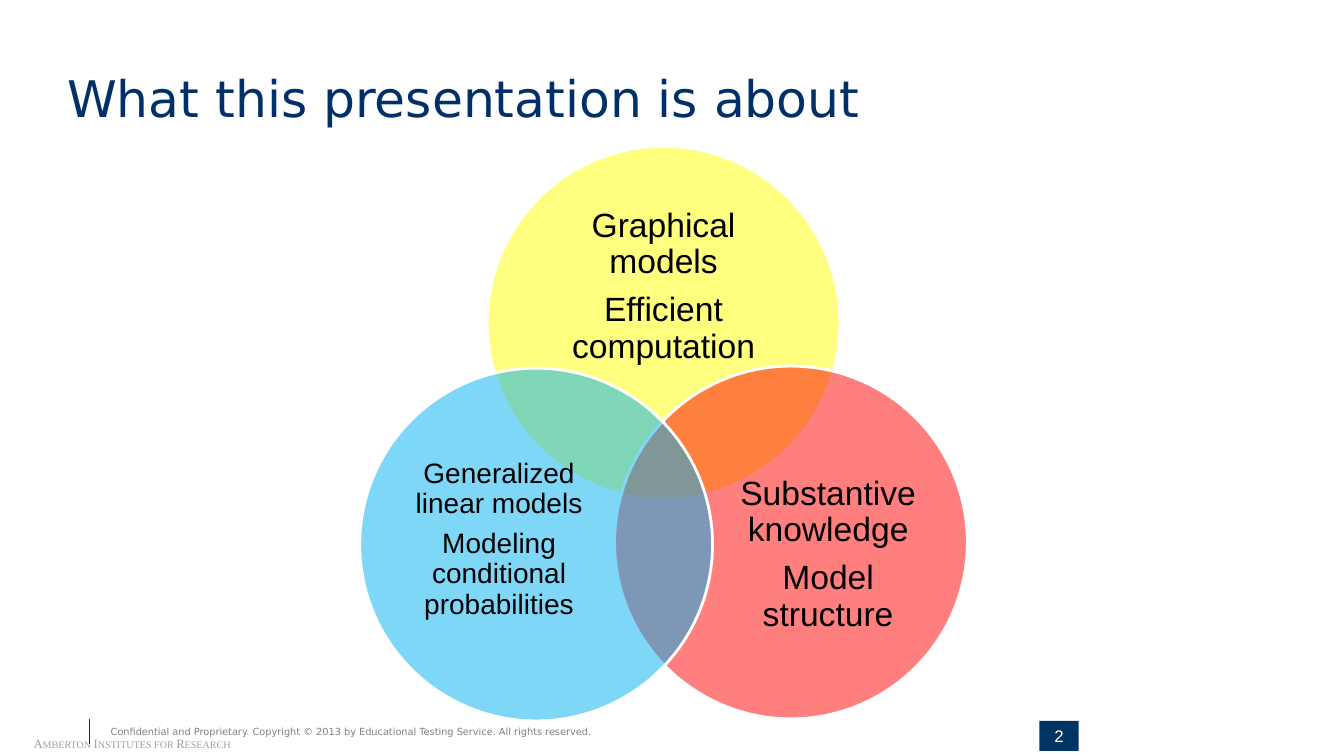
import pptx
import pptx.util
import pptx.dml.color
import pptx.enum.text
import pptx.enum.shapes
from lxml import etree

Pt = pptx.util.Pt
ALIGN = pptx.enum.text.PP_ALIGN
ANCHOR = pptx.enum.text.MSO_ANCHOR
SHAPE = pptx.enum.shapes.MSO_SHAPE

# Content
TITLE = "What this presentation is about"
OWNER = "Amberton Institutes for Research"
LEGAL = ("Confidential and Proprietary. Copyright © 2013 by "
         "Educational Testing Service. All rights reserved.")
PAGE = "2"
COLORS = {"navy": "003067", "badge": "003462", "white": "FFFFFF",
          "black": "000000", "gray": "808080", "pale": "9F9F9F",
          "yellow": "FFFF00", "red": "FF0000", "blue": "00B0F0"}
SIZE = 252  # circle diameter
# Circle: fill, left, top, text box, text size, paragraphs
CIRCLES = [
    ("yellow", 348, 104.5, (381.5, 148.5, 185, 113), 24,
     ["Graphical models", "Efficient computation"]),
    ("red", 439, 261.5, (516, 327, 151, 139), 24,
     ["Substantive knowledge", "Model structure"]),
    ("blue", 257, 263, (281, 328, 151, 115), 20,
     ["Generalized linear models", "Modeling conditional probabilities"]),
]


def color(name):
    return pptx.dml.color.RGBColor.from_string(COLORS[name])


def write(shape, lines, size, font, tint, align=ALIGN.LEFT,
          anchor=ANCHOR.TOP, inset=(0, 0), wrap=True):
    """Fill a shape with one run per paragraph."""
    frame = shape.text_frame
    frame.auto_size = pptx.enum.text.MSO_AUTO_SIZE.NONE
    frame.word_wrap = wrap
    frame.vertical_anchor = anchor
    frame.margin_left = frame.margin_right = Pt(inset[0])
    frame.margin_top = frame.margin_bottom = Pt(inset[1])
    for i, line in enumerate(lines):
        para = frame.paragraphs[0] if i == 0 else frame.add_paragraph()
        para.alignment = align
        run = para.add_run()
        run.text = line
        run.font.size = Pt(size)
        run.font.name = font
        run.font.color.rgb = color(tint)
    return frame


def draw(kind, box, fill):
    shape = slide.shapes.add_shape(kind, *map(Pt, box))
    shape.shadow.inherit = False
    shape.fill.solid()
    shape.fill.fore_color.rgb = color(fill)
    return shape


def label(box):
    return slide.shapes.add_textbox(*map(Pt, box))


deck = pptx.Presentation()
deck.slide_width, deck.slide_height = Pt(960), Pt(540)
slide = deck.slides.add_slide(deck.slide_layouts[5])

# Footer
owner = write(label((24, 525.5, 140, 11)), [OWNER], 9, "Times New Roman",
              "pale", wrap=False)
owner.paragraphs[0].runs[0].font._element.set("cap", "small")
write(label((72, 515, 600, 16)), [LEGAL], 7, "DejaVu Sans", "gray",
      inset=(7.2, 3.6))
rule = slide.shapes.add_connector(
    pptx.enum.shapes.MSO_CONNECTOR.STRAIGHT, Pt(64), Pt(513.5), Pt(64), Pt(531.5))
rule.line.color.rgb = color("navy")
rule.line.width = Pt(0.75)
etree.SubElement(rule._element.spPr, pptx.oxml.ns.qn("a:effectLst"))

# Title
title = slide.shapes.title
title.left, title.top, title.width, title.height = map(Pt, (48, 47, 864, 44))
write(title, [TITLE], 36, "DejaVu Sans", "navy", anchor=ANCHOR.BOTTOM)

# Page number
badge = draw(SHAPE.RECTANGLE, (742.5, 515, 28, 21.5), "badge")
badge.line.fill.background()
write(badge, [PAGE], 12, "Arial", "white", ALIGN.CENTER, ANCHOR.MIDDLE,
      (7.2, 3.6), False)

# Overlapping circles with their text
for fill, left, top, box, size, lines in CIRCLES:
    disc = draw(SHAPE.OVAL, (left, top, SIZE, SIZE), fill)
    disc.line.color.rgb = color("white")
    disc.line.width = Pt(2)
    tone = disc.fill._xPr.find(".//" + pptx.oxml.ns.qn("a:srgbClr"))
    etree.SubElement(tone, pptx.oxml.ns.qn("a:alpha"), val="50000")
    frame = write(label(box), lines, size, "Arial", "black",
                  ALIGN.CENTER, ANCHOR.MIDDLE)
    for para in frame.paragraphs:
        para.line_spacing = 0.9
        para.space_after = Pt(0.35 * size)

deck.save("out.pptx")
